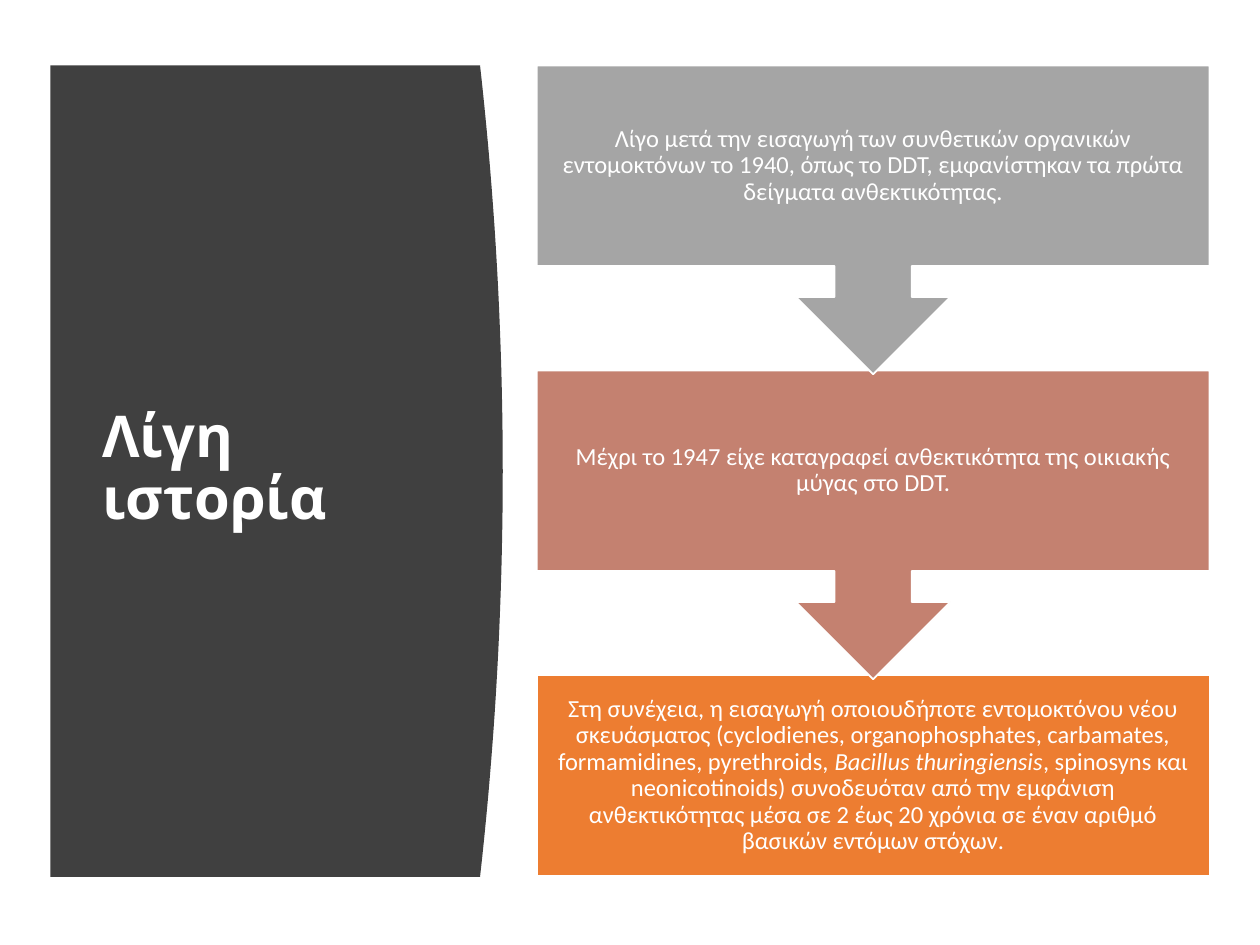
import pptx
import pptx.util
import pptx.dml.color
import pptx.enum.shapes
import pptx.enum.text
from dataclasses import dataclass

SHAPE = pptx.enum.shapes.MSO_SHAPE
ALIGN = pptx.enum.text.PP_ALIGN
Inches = pptx.util.Inches


@dataclass(frozen=True)
class Theme:
    panel: str = "404040"
    white: str = "FFFFFF"
    steps: tuple = ("A5A5A5", "C48170", "ED7D31")
    title_font: str = "Cabin"
    body_font: str = "Calibri"
    title_size: int = 33
    body_size: int = 14


THEME = Theme()
WIDTH, HEIGHT = 10, 7.5

# Grid: one column of three rows, beside the title panel
TOP, BOTTOM = 0.52, 6.96
STEP_LEFT, STEP_WIDTH = 4.26, 5.34
ROW_PITCH, BOX_HEIGHT, CALLOUT_HEIGHT = 2.42, 1.59, 2.45

# Each step is a list of (text, italic) spans
STEPS = [
    [("Λίγο μετά την εισαγωγή των συνθετικών οργανικών εντομοκτόνων το 1940, "
      "όπως το DDT, εμφανίστηκαν τα πρώτα δείγματα ανθεκτικότητας.", False)],
    [("Μέχρι το 1947 είχε καταγραφεί ανθεκτικότητα της οικιακής μύγας στο DDT.",
      False)],
    [("Στη συνέχεια, η εισαγωγή οποιουδήποτε εντομοκτόνου νέου σκευάσματος "
      "(cyclodienes, organophosphates, carbamates, formamidines, pyrethroids, ",
      False),
     ("Bacillus thuringiensis", True),
     (", spinosyns και neonicotinoids) συνοδευόταν από την εμφάνιση "
      "ανθεκτικότητας μέσα σε 2 έως 20 χρόνια σε έναν αριθμό βασικών εντόμων "
      "στόχων.", False)],
]


def rgb(code):
    return pptx.dml.color.RGBColor.from_string(code)


def write_text(frame, spans, *, font, size, align, bold=False, inset=None):
    """Fill a text frame with one paragraph of (text, italic) spans."""
    frame.word_wrap = True
    frame.auto_size = pptx.enum.text.MSO_AUTO_SIZE.NONE
    frame.vertical_anchor = pptx.enum.text.MSO_ANCHOR.MIDDLE
    if inset is not None:
        frame.margin_left = frame.margin_right = Inches(inset)
        frame.margin_top = frame.margin_bottom = Inches(inset)
    para = frame.paragraphs[0]
    para.alignment = align
    para.line_spacing = 0.9
    for text, italic in spans:
        span = para.add_run()
        span.text = text
        span.font.name = font
        span.font.size = pptx.util.Pt(size)
        span.font.bold = bold
        span.font.italic = italic
        span.font.color.rgb = rgb(THEME.white)


def add_panel(page):
    """Dark panel whose right edge bulges along a parabola."""
    left, edge, bulge, count = 0.4, 3.81, 0.18, 40
    points = []
    for index in range(count + 1):
        share = index / count
        x = edge + bulge * (1 - (2 * share - 1) ** 2)
        points.append((Inches(x), Inches(TOP + share * (BOTTOM - TOP))))
    points.append((Inches(left), Inches(BOTTOM)))
    builder = page.shapes.build_freeform(Inches(left), Inches(TOP))
    builder.add_line_segments(points, close=True)
    panel = builder.convert_to_shape()
    panel.shadow.inherit = False
    panel.fill.solid()
    panel.fill.fore_color.rgb = rgb(THEME.panel)
    panel.line.fill.background()


def place_title(page, text):
    title = page.shapes.title
    title.left, title.top = Inches(0.71), Inches(1.11)
    title.width, title.height = Inches(2.8), Inches(5.24)
    write_text(title.text_frame, [(text, False)], font=THEME.title_font,
               size=THEME.title_size, align=ALIGN.LEFT, bold=True)
    # Bring the title in front of the panel
    page.shapes._spTree.append(title._element)


def add_step(page, row, spans, color, *, last):
    """One step: a box, with an arrow to the next one unless it is the last."""
    kind = SHAPE.RECTANGLE if last else SHAPE.DOWN_ARROW_CALLOUT
    height = BOX_HEIGHT if last else CALLOUT_HEIGHT
    box = page.shapes.add_shape(
        kind, Inches(STEP_LEFT), Inches(TOP + row * ROW_PITCH),
        Inches(STEP_WIDTH), Inches(height))
    box.shadow.inherit = False
    box.fill.solid()
    box.fill.fore_color.rgb = rgb(color)
    box.line.color.rgb = rgb(THEME.white)
    box.line.width = pptx.util.Pt(1)
    write_text(box.text_frame, spans, font=THEME.body_font,
               size=THEME.body_size, align=ALIGN.CENTER, inset=0.11)


def main():
    deck = pptx.Presentation()
    deck.slide_width, deck.slide_height = Inches(WIDTH), Inches(HEIGHT)
    page = deck.slides.add_slide(deck.slide_layouts[5])

    # Title side
    add_panel(page)
    place_title(page, "Λίγη ιστορία")

    # Steps from the bottom up, so each arrow tip overlaps the next box
    for row in reversed(range(len(STEPS))):
        add_step(page, row, STEPS[row], THEME.steps[row],
                 last=row == len(STEPS) - 1)

    deck.save("out.pptx")


if __name__ == "__main__":
    main()
